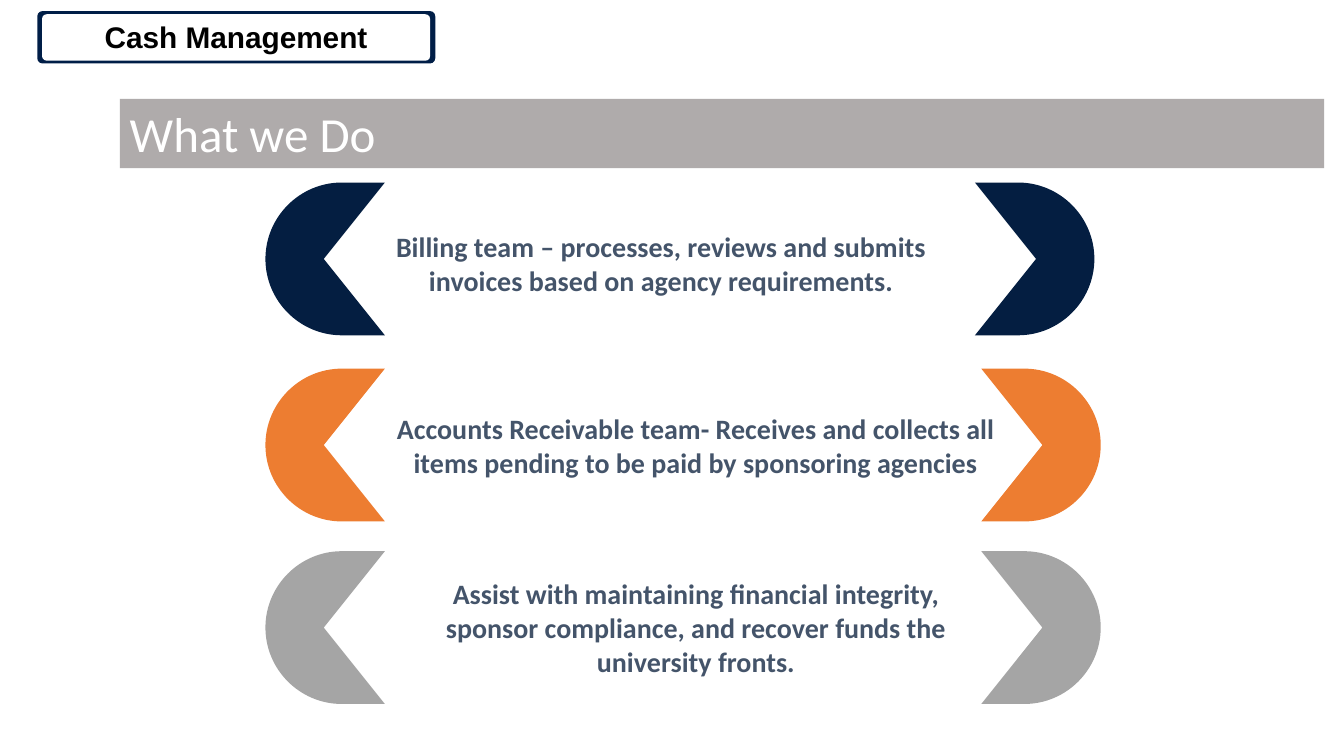
from dataclasses import dataclass

from lxml.etree import SubElement
from pptx import Presentation
from pptx.dml.color import RGBColor
from pptx.enum.shapes import MSO_SHAPE as Preset
from pptx.enum.text import MSO_ANCHOR as Anchor, MSO_AUTO_SIZE as AutoSize, PP_ALIGN as Align
from pptx.oxml.ns import qn
from pptx.util import Cm, Pt


@dataclass(frozen=True)
class Theme:
    navy: str = "041E41"
    orange: str = "ED7D31"
    grey: str = "A5A5A5"
    banner: str = "AFABAB"
    badge_edge: str = "001E47"
    white: str = "FFFFFF"
    black: str = "000000"
    slate: str = "44546A"
    banner_size: float = 35
    duty_size: float = 20
    badge_size: float = 21.3


THEME = Theme()

BRACKET_LEFT, BRACKET_WIDTH, BRACKET_HEIGHT = 6.69, 3.01, 3.85
NOTCH_DEPTH = 1.54
ARC_HANDLE = 0.55  # Bezier handle of a quarter circle, as a share of its radius

# bracket colour, bracket top, right bracket left, text box, text
DUTIES = [
    (THEME.navy, 4.6, 24.57, (9.14, 5.66, 15.04, 1.96),
     "Billing team – processes, reviews and submits invoices based on agency requirements."),
    (THEME.orange, 9.29, 24.73, (9.53, 10.24, 16, 1.96),
     "Accounts Receivable team- Receives and collects all items pending to be paid "
     "by sponsoring agencies"),
    (THEME.grey, 13.89, 24.73, (10.11, 14.4, 14.86, 2.82),
     "Assist with maintaining financial integrity, sponsor compliance, and recover funds "
     "the university fronts."),
]


def apply(target, values):
    for name, value in values.items():
        setattr(target, name, value)


def paint(shape, colour):
    """Fill the shape plainly, without outline or shadow."""
    shape.shadow.inherit = False
    shape.fill.solid()
    shape.fill.fore_color.rgb = RGBColor.from_string(colour)
    shape.line.fill.background()


def write(shape, text, colour, font, align=Align.CENTER, frame=None):
    apply(shape.text_frame, {"word_wrap": True, "vertical_anchor": Anchor.MIDDLE,
                             **(frame or {})})
    paragraph = shape.text_frame.paragraphs[0]
    paragraph.alignment = align
    run = paragraph.add_run()
    run.text = text
    apply(run.font, font)
    run.font.color.rgb = RGBColor.from_string(colour)


def add_panel(slide, preset, box, colour):
    panel = slide.shapes.add_shape(preset, *map(Cm, box))
    paint(panel, colour)
    return panel


def curve(shape, starts):
    """Turn the three line segments from each start index into one Bezier curve."""
    segments = list(shape.element.iter(qn("a:lnTo")))
    for start in starts:
        handles_and_end = segments[start:start + 3]
        bezier = SubElement(handles_and_end[0].getparent(), qn("a:cubicBezTo"))
        handles_and_end[0].addprevious(bezier)
        for segment in handles_and_end:
            bezier.append(segment[0])
            segment.getparent().remove(segment)


def add_bracket(slide, left, top, colour, opens_right):
    """Draw a half-round bracket with a V notch on its open side."""
    radius = BRACKET_HEIGHT / 2
    handle = radius * ARC_HANDLE
    outline = [(BRACKET_WIDTH, BRACKET_HEIGHT), (radius, BRACKET_HEIGHT),
               (radius - handle, BRACKET_HEIGHT), (0, radius + handle), (0, radius),
               (0, radius - handle), (radius - handle, 0), (radius, 0),
               (BRACKET_WIDTH, 0), (BRACKET_WIDTH - NOTCH_DEPTH, radius)]
    points = [(Cm(left + (x if opens_right else BRACKET_WIDTH - x)), Cm(top + y))
              for x, y in outline]
    builder = slide.shapes.build_freeform(*points[0], scale=1.0)
    builder.add_line_segments(points[1:], close=True)
    bracket = builder.convert_to_shape()
    curve(bracket, starts=(1, 4))
    paint(bracket, colour)


def add_duty(slide, colour, top, right_left, text_box, text):
    add_bracket(slide, BRACKET_LEFT, top, colour, opens_right=True)
    add_bracket(slide, right_left, top, colour, opens_right=False)
    duty = slide.shapes.add_textbox(*map(Cm, text_box))
    write(duty, text, THEME.slate,
          {"name": "Calibri", "size": Pt(THEME.duty_size), "bold": True},
          frame={"auto_size": AutoSize.SHAPE_TO_FIT_TEXT})


def add_banner(slide, text):
    banner = add_panel(slide, Preset.RECTANGLE, (3.02, 2.49, 30.35, 1.75), THEME.banner)
    write(banner, text, THEME.white, {"name": "Calibri", "size": Pt(THEME.banner_size)},
          Align.LEFT,
          {"vertical_anchor": Anchor.TOP, "auto_size": AutoSize.SHAPE_TO_FIT_TEXT})


def add_badge(slide, text):
    edge = add_panel(slide, Preset.ROUNDED_RECTANGLE, (0.94, 0.28, 10.03, 1.32),
                     THEME.badge_edge)
    face = add_panel(slide, Preset.ROUNDED_RECTANGLE, (1.06, 0.36, 9.78, 1.17), THEME.white)
    for plate in (edge, face):
        plate.adjustments[0] = 0.1
    write(face, text, THEME.black,
          {"name": "Arial", "size": Pt(THEME.badge_size), "bold": True},
          frame={"margin_top": 0, "margin_bottom": Cm(0.05)})


def main():
    deck = Presentation()
    apply(deck, {"slide_width": Cm(33.87), "slide_height": Cm(19.05)})
    slide = deck.slides.add_slide(deck.slide_layouts[6])
    add_banner(slide, "What we Do")
    for duty in DUTIES:
        add_duty(slide, *duty)
    add_badge(slide, "Cash Management")
    deck.save("out.pptx")


if __name__ == "__main__":
    main()
